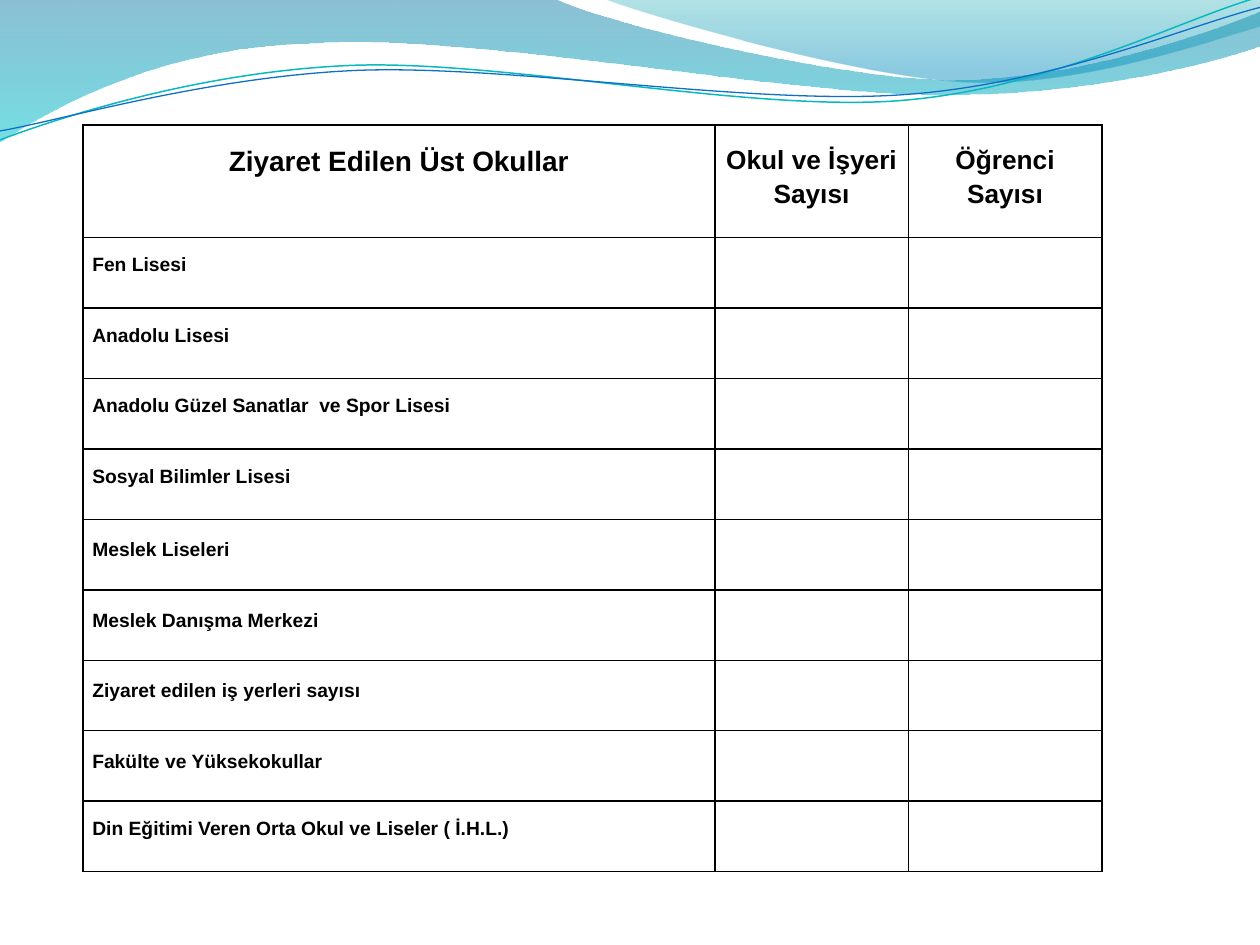
import math

from lxml import etree
from pptx import Presentation
from pptx import util as u
from pptx.dml.color import RGBColor
from pptx.enum import text
from pptx.oxml import ns

THEME = {
    "font": "Arial", "ink": "000000", "border_pt": 1,
    "title_pt": 16, "heading_pt": 15, "row_pt": 11,
}
LOOSE = 1.15

HEADINGS = [
    ("Ziyaret Edilen Üst Okullar", THEME["title_pt"]),
    ("Okul ve İşyeri Sayısı", THEME["heading_pt"]),
    ("Öğrenci Sayısı", THEME["heading_pt"]),
]
SCHOOLS = [  # name, line spacing
    ("Fen Lisesi", None),
    ("Anadolu Lisesi", None),
    ("Anadolu Güzel Sanatlar  ve Spor Lisesi", None),
    ("Sosyal Bilimler Lisesi", None),
    ("Meslek Liseleri", LOOSE),
    ("Meslek Danışma Merkezi", LOOSE),
    ("Ziyaret edilen iş yerleri sayısı", LOOSE),
    ("Fakülte ve Yüksekokullar", LOOSE),
    ("Din Eğitimi Veren Orta Okul ve Liseler ( İ.H.L.)", None),
]
COLUMNS = [12.74, 3.9, 3.9]
HEADING_HEIGHT, ROW_HEIGHT = 2.27, 1.42
TABLE_LEFT, TABLE_TOP = 1.67, 2.52

# Outlines in cm: one point is a corner, three points are a Bézier curve.
# Gradient stops: position, colour, opacity in percent.
WAVES = [
    ([[(0, 0)], [(11.18, -0.03)],
      [(12.09, 0.43), (16.87, 1.6), (19.25, 1.6)],
      [(21.67, 1.6), (24.33, 0.66), (25.4, 0.23)],
      [(25.43, 0.91)],
      [(24.97, 1.12), (22.1, 1.93), (18.95, 1.91)],
      [(15.8, 1.91), (9.7, 0.71), (6.53, 0.86)],
      [(3.28, 0.91), (1.17, 2.11), (-0.03, 2.87)],
      [(0, 0)]],
     [(0, "0074A1", 45), (1, "00C6CF", 55)]),
    ([[(12.17, -0.03)],
      [(12.93, 0.28), (17.32, 1.57), (19.53, 1.65)],
      [(21.74, 1.75), (24.41, 0.81), (25.4, 0.53)],
      [(25.4, 0)], [(12.17, -0.03)]],
     [(0, "00A1A9", 30), (0.8, "008BBF", 45)]),
]
# Strands are tilted about a centre: outline, centre, colour, width in points.
TILT = -2.7
STRANDS = [
    ([[(0, 2.82)],
      [(1.22, 2.36), (4.01, 1.45), (7.04, 1.32)],
      [(10.03, 1.19), (15.06, 2.26), (18.11, 2.03)],
      [(21.16, 1.8), (23.83, 0.38), (25.35, -0.05)]], (12.67, 1.46), "0AB8BF", 0.85),
    ([[(0, 2.64)],
      [(1.19, 2.44), (4.17, 1.55), (7.19, 1.42)],
      [(10.24, 1.3), (15.16, 2.13), (18.21, 1.91)],
      [(21.23, 1.7), (23.9, 0.53), (25.4, 0.15)]], (12.69, 1.5), "0F6FC6", 0.75),
]


def draw_outline(slide, outline, close):
    """Build a freeform, then join each run of three points into one curve."""
    start, *rest = [(u.Cm(x), u.Cm(y)) for segment in outline for x, y in segment]
    builder = slide.shapes.build_freeform(*start)
    builder.add_line_segments(rest, close=close)
    freeform = builder.convert_to_shape()
    freeform.shadow.inherit = False
    corners = iter(list(freeform._element.iter(ns.qn("a:lnTo"))))
    for segment in outline[1:]:
        joined = [next(corners) for _ in segment]
        if len(joined) == 3:
            curve = etree.Element(ns.qn("a:cubicBezTo"))
            joined[0].addprevious(curve)
            for corner in joined:
                curve.append(corner[0])
                corner.getparent().remove(corner)
    return freeform


def level(outline, centre):
    """Turn an outline back by the tilt, so that the shape's rotation restores it."""
    cos, sin = math.cos(math.radians(-TILT)), math.sin(math.radians(-TILT))
    cx, cy = centre
    return [[(cx + (x - cx) * cos - (y - cy) * sin,
              cy + (x - cx) * sin + (y - cy) * cos) for x, y in segment]
            for segment in outline]


def add_wave(slide, outline, stops):
    wave = draw_outline(slide, outline, True)
    wave.line.fill.background()
    wave.fill.gradient()
    wave.fill.gradient_angle = 270
    for stop, (position, colour, opacity) in zip(wave.fill.gradient_stops, stops):
        stop.position = position
        stop.color.rgb = RGBColor.from_string(colour)
        tint = stop._gs.find(ns.qn("a:srgbClr"))
        etree.SubElement(tint, ns.qn("a:alpha"), val=str(opacity * 1000))


def add_strand(slide, outline, centre, colour, width):
    strand = draw_outline(slide, level(outline, centre), False)
    strand.rotation = TILT
    strand.fill.background()
    strand.line.color.rgb = RGBColor.from_string(colour)
    strand.line.width = u.Pt(width)


def style_cell(cell):
    properties = cell._tc.get_or_add_tcPr()
    for side in ("lnL", "lnR", "lnT", "lnB"):
        border = etree.SubElement(properties, ns.qn(f"a:{side}"),
                                  w=str(u.Pt(THEME["border_pt"])))
        solid = etree.SubElement(border, ns.qn("a:solidFill"))
        etree.SubElement(solid, ns.qn("a:srgbClr"), val=THEME["ink"])
    cell.fill.background()


def write_cell(cell, words, size, spacing, align):
    cell.margin_left = cell.margin_right = u.Cm(0.19)
    cell.margin_top = cell.margin_bottom = u.Cm(0.34)
    paragraph = cell.text_frame.paragraphs[0]
    paragraph.alignment = align
    paragraph.line_spacing = spacing
    run = paragraph.add_run()
    run.text = words
    run.font.name = THEME["font"]
    run.font.size = u.Pt(size)
    run.font.bold = True
    run.font.color.rgb = RGBColor.from_string(THEME["ink"])


def add_visits(slide):
    height = HEADING_HEIGHT + ROW_HEIGHT * len(SCHOOLS)
    visits = slide.shapes.add_table(
        len(SCHOOLS) + 1, len(COLUMNS), u.Cm(TABLE_LEFT), u.Cm(TABLE_TOP),
        u.Cm(sum(COLUMNS)), u.Cm(height)).table
    visits.first_row = visits.horz_banding = False
    for column, width in zip(visits.columns, COLUMNS):
        column.width = u.Cm(width)
    for index, row in enumerate(visits.rows):
        row.height = u.Cm(ROW_HEIGHT if index else HEADING_HEIGHT)
    for cell in visits.iter_cells():
        style_cell(cell)
    for column, (heading, size) in enumerate(HEADINGS):
        write_cell(visits.cell(0, column), heading, size, LOOSE, text.PP_ALIGN.CENTER)
    for row, (school, spacing) in enumerate(SCHOOLS, 1):
        write_cell(visits.cell(row, 0), school, THEME["row_pt"], spacing,
                   text.PP_ALIGN.LEFT)


def main():
    deck = Presentation()
    deck.slide_width, deck.slide_height = u.Cm(25.4), u.Cm(19.05)
    slide = deck.slides.add_slide(deck.slide_layouts[6])
    for wave in WAVES:
        add_wave(slide, *wave)
    for strand in STRANDS:
        add_strand(slide, *strand)
    add_visits(slide)
    deck.save("out.pptx")


if __name__ == "__main__":
    main()
